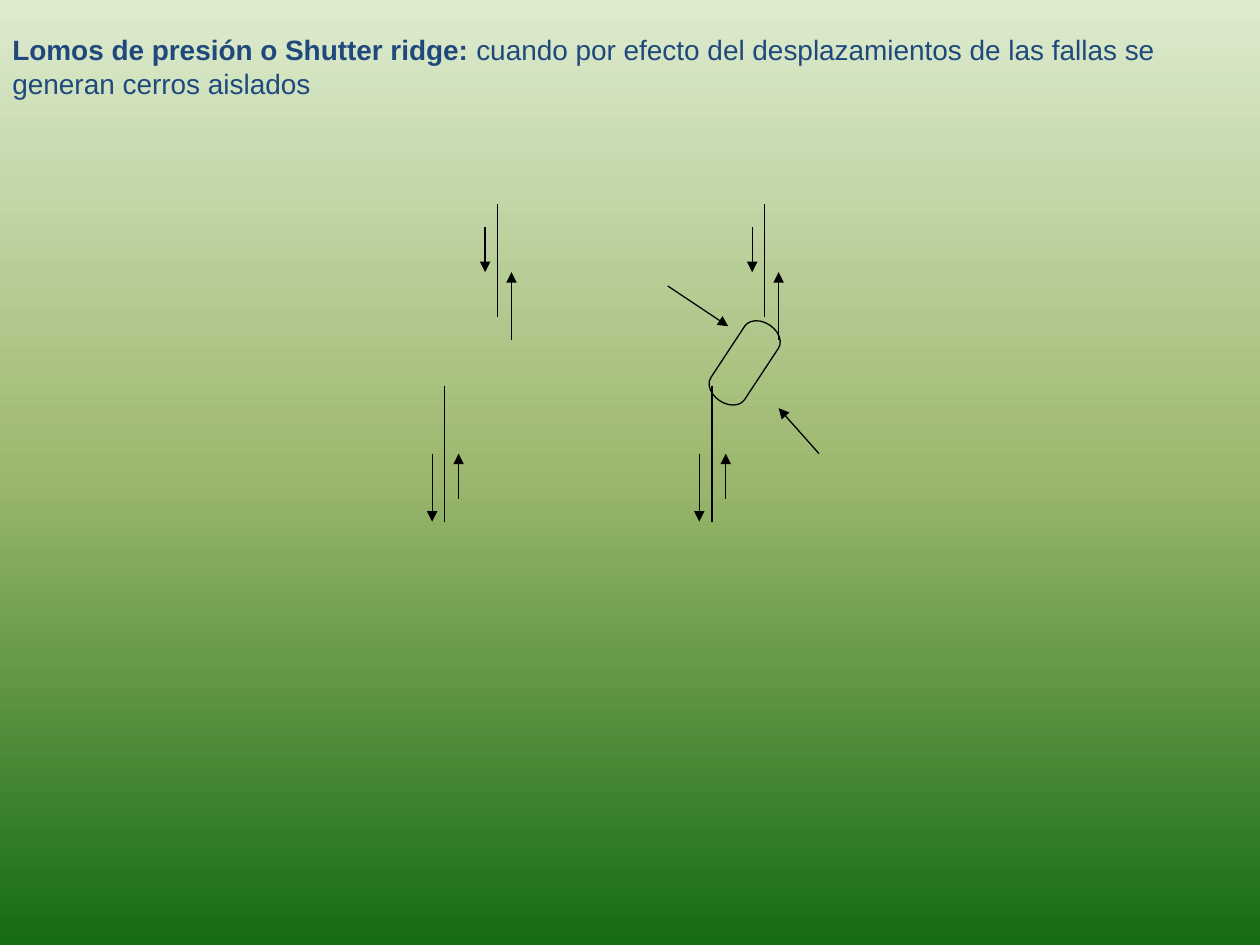
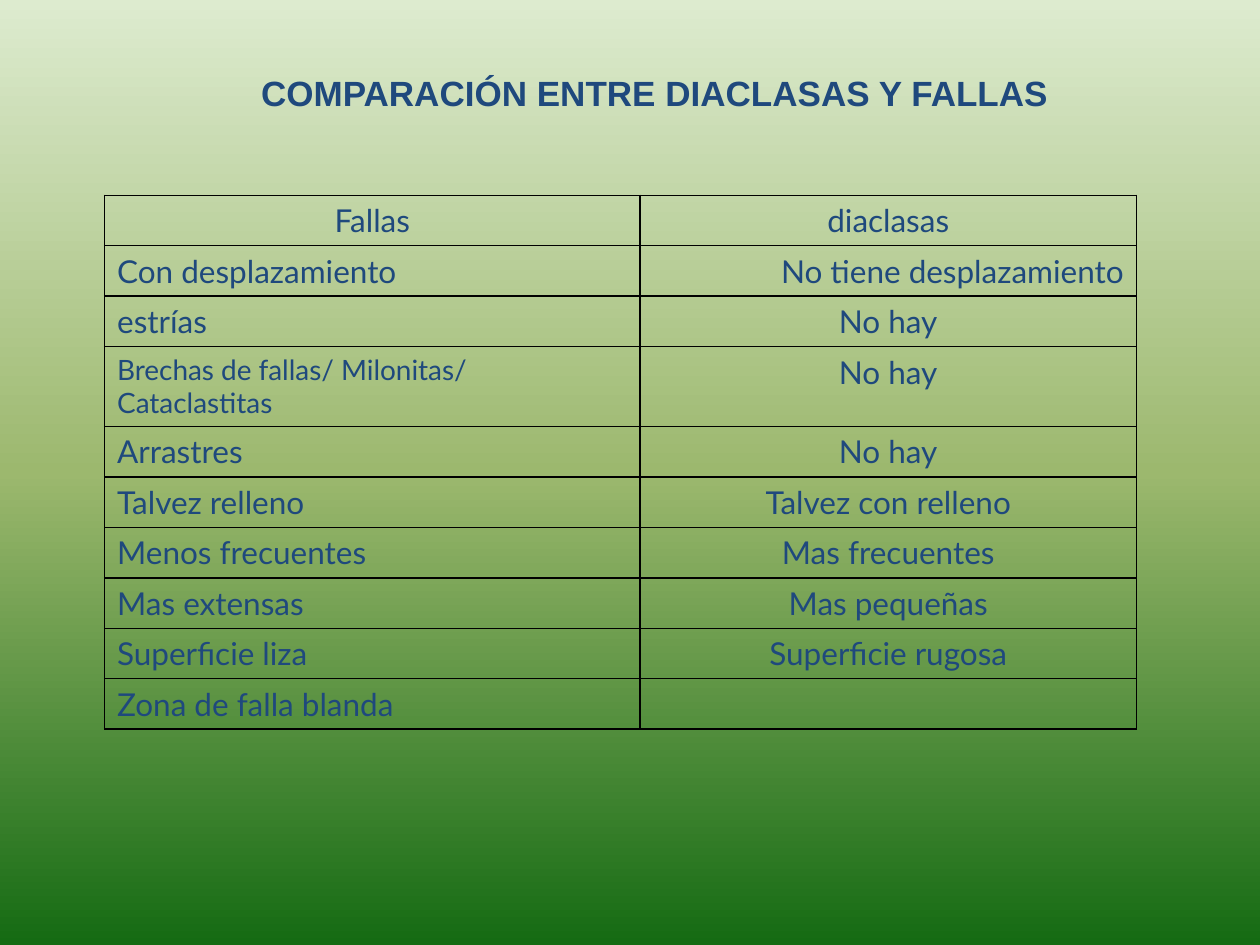
from dataclasses import dataclass
from typing import NamedTuple

from lxml.etree import SubElement
from pptx import Presentation
from pptx.dml.color import RGBColor
from pptx.enum.shapes import MSO_CONNECTOR as Connector, MSO_SHAPE as Preset
from pptx.enum.text import MSO_ANCHOR as Anchor, PP_ALIGN as Align
from pptx.oxml.ns import qn
from pptx.util import Inches, Pt


@dataclass(frozen=True)
class Theme:
    text: str = "1F497D"
    line: str = "000000"
    gradient: tuple = ((0, "DDEBCF"), (50, "9CB86E"), (100, "156B13"))
    title_font: str = "Arial"
    table_font: str = "Lato"
    title_size: int = 20
    lead_size: int = 16
    cell_size: int = 18
    small_size: int = 16
    line_width: float = 0.75
    border_width: float = 1


class Stroke(NamedTuple):
    x1: float
    y1: float
    x2: float
    y2: float
    arrow: bool = True


class Row(NamedTuple):
    fault: str
    joint: str = ""
    fault_align: Align = Align.LEFT
    joint_align: Align = Align.CENTER
    fault_size: int = 18


THEME = Theme()

# Two fault segments with their directions of movement
FAULT_PAIR = (
    Stroke(3.95, 1.62, 3.95, 2.52, arrow=False),
    Stroke(3.53, 3.06, 3.53, 4.14, arrow=False),
    Stroke(3.64, 3.96, 3.64, 3.6),
    Stroke(3.43, 3.6, 3.43, 4.14),
    Stroke(3.85, 1.8, 3.85, 2.16),
    Stroke(4.06, 2.7, 4.06, 2.16),
)
PAIR_SHIFTS = (0, 2.12)
COMPRESSION = (Stroke(6.5, 3.6, 6.18, 3.24), Stroke(5.3, 2.27, 5.78, 2.59))

ROWS = (
    Row("Fallas", "diaclasas", fault_align=Align.CENTER),
    Row("Con desplazamiento", "No tiene desplazamiento", joint_align=Align.RIGHT),
    Row("estrías", "No hay"),
    Row("Brechas de fallas/ Milonitas/ Cataclastitas", "No hay",
        fault_size=THEME.small_size),
    Row("Arrastres", "No hay"),
    Row("Talvez relleno", "Talvez con relleno"),
    Row("Menos frecuentes", "Mas frecuentes"),
    Row("Mas extensas", "Mas pequeñas"),
    Row("Superficie liza", "Superficie rugosa"),
    Row("Zona de falla blanda"),
)


# Shared helpers
def add_page(deck):
    """Add a blank page with the vertical green gradient."""
    page = deck.slides.add_slide(deck.slide_layouts[6])
    fill = page.background.fill
    fill.gradient()
    fill.gradient_angle = 270
    stops = next(page.element.iter(qn("a:gsLst")))
    for stop in list(stops):
        stops.remove(stop)
    for percent, color in THEME.gradient:
        stop = SubElement(stops, qn("a:gs"), pos=str(percent * 1000))
        SubElement(stop, qn("a:srgbClr"), val=color)
    return page


def write(para, text: str, *, size: float, font: str = THEME.title_font,
          bold: bool = False, align: Align = Align.LEFT) -> None:
    para.alignment = align
    span = para.add_run()
    span.text = text
    span.font.name = font
    span.font.size = Pt(size)
    span.font.bold = bold
    span.font.color.rgb = RGBColor.from_string(THEME.text)


def add_box(page, left: float, top: float, width: float, height: float):
    """Add a wrapping text box and return its first paragraph."""
    box = page.shapes.add_textbox(*map(Inches, (left, top, width, height)))
    box.text_frame.word_wrap = True
    box.text_frame.vertical_anchor = Anchor.TOP
    return box.text_frame.paragraphs[0]


def style_line(line) -> None:
    line.color.rgb = RGBColor.from_string(THEME.line)
    line.width = Pt(THEME.line_width)


def draw_stroke(group, stroke: Stroke, shift: float = 0) -> None:
    ends = (stroke.x1 + shift, stroke.y1, stroke.x2 + shift, stroke.y2)
    connector = group.shapes.add_connector(Connector.STRAIGHT, *map(Inches, ends))
    style_line(connector.line)
    properties = connector.element.spPr
    if stroke.arrow:
        SubElement(properties.find(qn("a:ln")), qn("a:tailEnd"), type="triangle")
    SubElement(properties, qn("a:effectLst"))


def style_cell(cell) -> None:
    """Clear the fill and rule all four sides."""
    cell.fill.background()
    properties = cell._tc.get_or_add_tcPr()
    for index, side in enumerate(("a:lnL", "a:lnR", "a:lnT", "a:lnB")):
        border = SubElement(properties, qn(side), w=str(Pt(THEME.border_width)))
        fill = SubElement(border, qn("a:solidFill"))
        SubElement(fill, qn("a:srgbClr"), val=THEME.line)
        properties.insert(index, border)


# Pages
def build_ridges(deck) -> None:
    page = add_page(deck)
    para = add_box(page, 0, 0.21, 10, 0.64)
    write(para, "Lomos de presión o Shutter ridge:", size=THEME.lead_size, bold=True)
    write(para, " cuando por efecto del desplazamientos de las fallas se generan "
                "cerros aislados", size=THEME.lead_size)

    group = page.shapes.add_group_shape()
    for shift in PAIR_SHIFTS:
        for stroke in FAULT_PAIR:
            draw_stroke(group, stroke, shift)
    ridge = group.shapes.add_shape(Preset.FLOWCHART_TERMINATOR,
                                   *map(Inches, (5.55, 2.72, 0.72, 0.32)))
    ridge.rotation = 303.4
    ridge.shadow.inherit = False
    ridge.fill.background()
    style_line(ridge.line)
    for stroke in COMPRESSION:
        draw_stroke(group, stroke)


def build_comparison(deck) -> None:
    page = add_page(deck)
    title = add_box(page, 1.69, 0.52, 7.01, 0.72)
    write(title, "COMPARACIÓN ENTRE DIACLASAS Y FALLAS", size=THEME.title_size,
          bold=True, align=Align.CENTER)

    frame = page.shapes.add_table(len(ROWS), 2, *map(Inches, (0.83, 1.55, 8.19, 4)))
    table = frame.table
    table.first_row = table.horz_banding = False
    for column, width in zip(table.columns, (4.25, 3.94)):
        column.width = Inches(width)
    for index, row in enumerate(ROWS):
        entries = ((row.fault, row.fault_align, row.fault_size),
                   (row.joint, row.joint_align, THEME.cell_size))
        for cell, (text, align, size) in zip(table.rows[index].cells, entries):
            style_cell(cell)
            if text:
                write(cell.text_frame.paragraphs[0], text, size=size,
                      font=THEME.table_font, align=align)


def main() -> None:
    deck = Presentation()
    deck.slide_width, deck.slide_height = Inches(10), Inches(7.5)
    build_ridges(deck)
    build_comparison(deck)
    deck.save("out.pptx")


if __name__ == "__main__":
    main()
